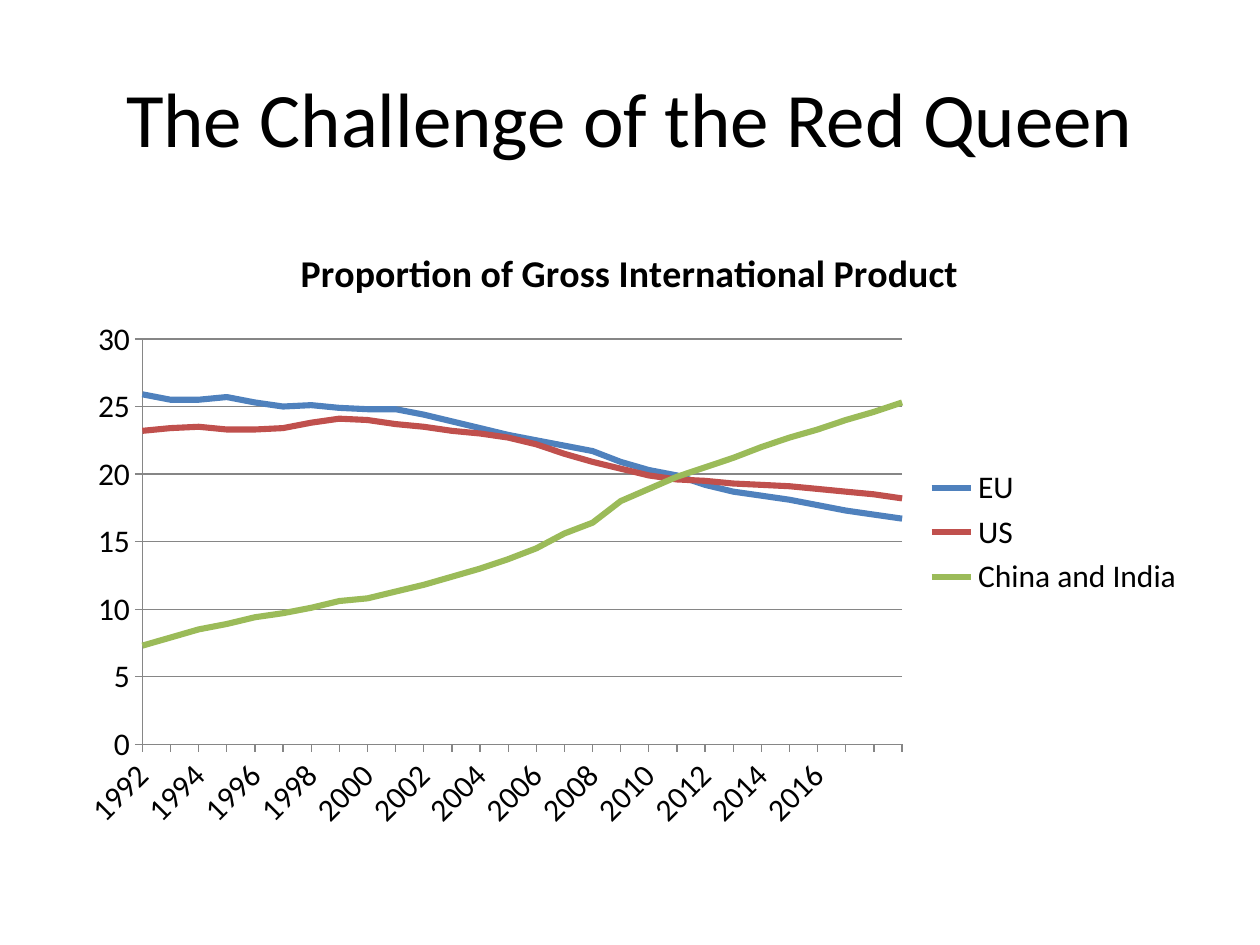
from dataclasses import dataclass

from lxml.etree import SubElement
from pptx import Presentation
from pptx.chart.data import CategoryChartData
from pptx.dml.color import RGBColor
from pptx.enum.chart import XL_CHART_TYPE, XL_LEGEND_POSITION, XL_MARKER_STYLE, XL_TICK_MARK
from pptx.enum.text import MSO_ANCHOR, PP_ALIGN
from pptx.oxml.ns import qn
from pptx.util import Inches, Pt


@dataclass(frozen=True)
class Theme:
    font: str = "Calibri"
    text: RGBColor = RGBColor(0, 0, 0)
    grid: RGBColor = RGBColor(0x86, 0x86, 0x86)
    series: tuple = ("4F81BD", "C0504D", "9BBB59")
    title_size: float = 44
    chart_title_size: float = 21.6
    chart_size: float = 18
    line: float = 3.5
    hairline: float = 0.75


class SlideBuilder:
    def __init__(self, prs, theme):
        self.prs, self.theme = prs, theme
        self.s = prs.slides.add_slide(prs.slide_layouts[5])

    def box(self, x, y, w, h):
        """Turn shares of the slide's size into lengths."""
        width, height = self.prs.slide_width, self.prs.slide_height
        return int(x * width), int(y * height), int(w * width), int(h * height)

    def style(self, font, size, bold=False):
        font.name, font.size, font.bold = self.theme.font, Pt(size), bold
        font.color.rgb = self.theme.text

    def title(self, text, *share):
        sp = self.s.shapes.title
        sp.left, sp.top, sp.width, sp.height = self.box(*share)
        tf = sp.text_frame
        tf.text, tf.vertical_anchor = text, MSO_ANCHOR.MIDDLE
        p = tf.paragraphs[0]
        p.alignment = PP_ALIGN.CENTER
        self.style(p.font, self.theme.title_size)

    def line_chart(self, title, categories, series, plot, *share):
        data = CategoryChartData(number_format="General")
        data.categories = categories
        for name, values in series.items():
            data.add_series(name, values)
        chart = self.s.shapes.add_chart(XL_CHART_TYPE.LINE, *self.box(*share), data).chart
        self.style(chart.font, self.theme.chart_size)

        # Title and legend
        chart.has_title = True
        tf = chart.chart_title.text_frame
        tf.text = title
        self.style(tf.paragraphs[0].font, self.theme.chart_title_size, bold=True)
        chart.chart_title.include_in_layout = False
        chart.has_legend = True
        chart.legend.position = XL_LEGEND_POSITION.RIGHT
        chart.legend.include_in_layout = False

        # Lines
        chart.plots[0].vary_by_categories = False
        for ser, color in zip(chart.plots[0].series, self.theme.series):
            ser.smooth = False
            ser.marker.style = XL_MARKER_STYLE.NONE
            ser.format.line.width = Pt(self.theme.line)
            ser.format.line.color.rgb = RGBColor.from_string(color)

        self.axes(chart)
        self.place_plot(chart, plot)

    def axes(self, chart):
        years, values = chart.category_axis, chart.value_axis
        values.minimum_scale, values.maximum_scale, values.major_unit = 0, 30, 5
        values.has_major_gridlines = True
        for part in (years, values, values.major_gridlines):
            part.format.line.color.rgb = self.theme.grid
            part.format.line.width = Pt(self.theme.hairline)
        for axis in (years, values):
            axis.major_tick_mark = XL_TICK_MARK.OUTSIDE
            axis.minor_tick_mark = XL_TICK_MARK.NONE
            self.style(axis.tick_labels.font, self.theme.chart_size)

        # Slanted years; the lines start on the value axis
        years._element.find(qn("c:txPr")).find(qn("a:bodyPr")).set("rot", "-2700000")
        val_ax = values._element
        cross = val_ax.find(qn("c:crossBetween"))
        if cross is None:
            cross = SubElement(val_ax, qn("c:crossBetween"))
            val_ax.find(qn("c:crosses")).addnext(cross)
        cross.set("val", "midCat")

    def place_plot(self, chart, plot):
        """Fix the inner plot area, in shares of the chart's size."""
        area = chart._chartSpace.chart.plotArea
        layout = area.find(qn("c:layout"))
        if layout is None:
            layout = SubElement(area, qn("c:layout"))
            area.insert(0, layout)
        manual = SubElement(layout, qn("c:manualLayout"))
        settings = [("layoutTarget", "inner"), ("xMode", "edge"), ("yMode", "edge")]
        for tag, value in settings + list(zip("xywh", plot)):
            SubElement(manual, qn(f"c:{tag}")).set("val", str(value))


YEARS = [str(year) for year in range(1992, 2018)] + ["", ""]
SHARES = {
    "EU": [25.9, 25.5, 25.5, 25.7, 25.3, 25, 25.1, 24.9, 24.8, 24.8, 24.4, 23.9, 23.4, 22.9,
           22.5, 22.1, 21.7, 20.9, 20.3, 19.9, 19.2, 18.7, 18.4, 18.1, 17.7, 17.3, 17, 16.7],
    "US": [23.2, 23.4, 23.5, 23.3, 23.3, 23.4, 23.8, 24.1, 24, 23.7, 23.5, 23.2, 23, 22.7,
           22.2, 21.5, 20.9, 20.4, 19.9, 19.6, 19.5, 19.3, 19.2, 19.1, 18.9, 18.7, 18.5, 18.2],
    "China and India": [7.3, 7.9, 8.5, 8.9, 9.4, 9.7, 10.1, 10.6, 10.8, 11.3, 11.8, 12.4, 13, 13.7,
                        14.5, 15.6, 16.4, 18, 18.9, 19.8, 20.5, 21.2, 22, 22.7, 23.3, 24, 24.6, 25.3],
}


def main():
    prs = Presentation()
    prs.slide_width, prs.slide_height = Inches(10), Inches(7.5)
    slide = SlideBuilder(prs, Theme())
    slide.title("The Challenge of the Red Queen", 0.05, 0.04, 0.9, 1 / 6)
    slide.line_chart("Proportion of Gross International Product", YEARS, SHARES,
                     (0.07, 0.19, 0.67, 0.65), 0.05, 7 / 30, 0.9, 0.66)
    prs.save("out.pptx")


if __name__ == "__main__":
    main()
